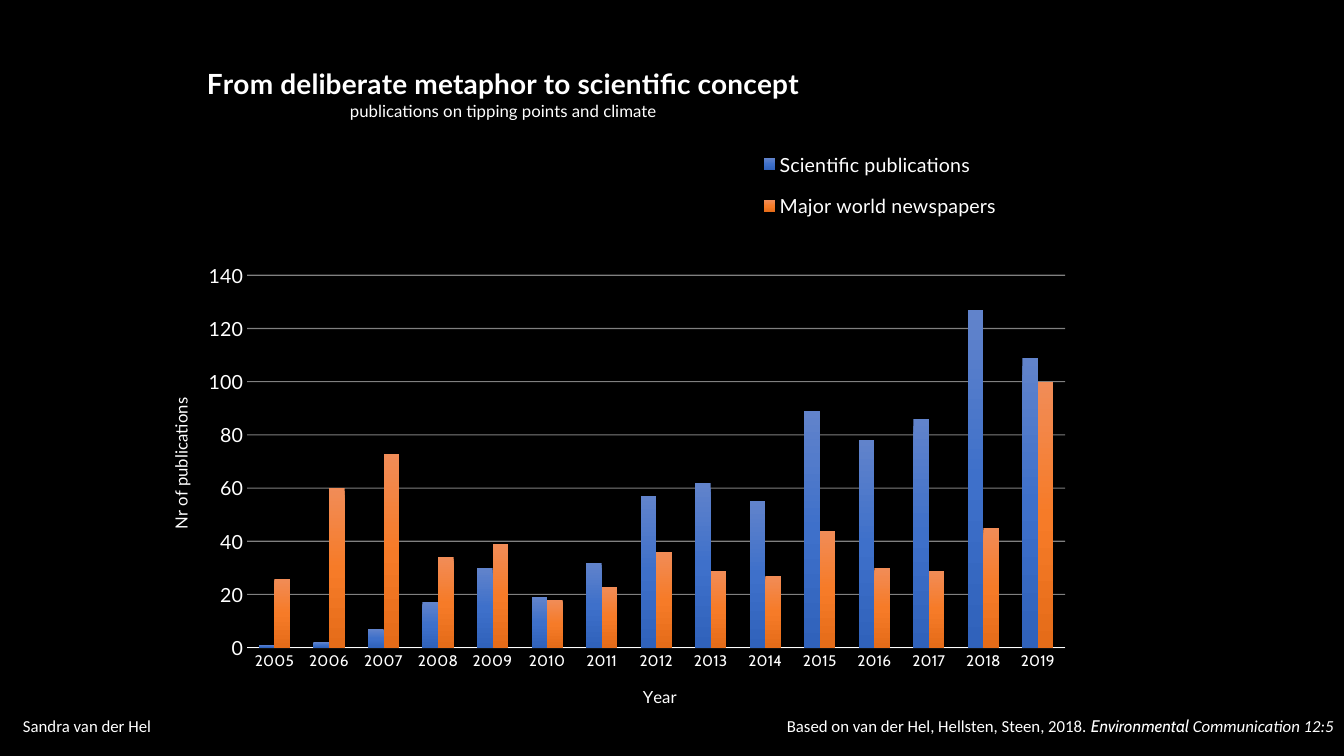
from copy import deepcopy

from lxml import etree
from pptx import Presentation
from pptx.chart.data import CategoryChartData
from pptx.dml.color import RGBColor
from pptx.enum.chart import XL_CHART_TYPE, XL_LEGEND_POSITION, XL_TICK_MARK
from pptx.enum.text import MSO_ANCHOR
from pptx.oxml.ns import qn
from pptx.util import Cm, Pt

COLUMNS = XL_CHART_TYPE.COLUMN_CLUSTERED
LEGEND_LEFT = XL_LEGEND_POSITION.LEFT
NO_TICK = XL_TICK_MARK.NONE
TOP, MIDDLE = MSO_ANCHOR.TOP, MSO_ANCHOR.MIDDLE

BLACK, WHITE = "000000", "FFFFFF"
YEARS = [str(year) for year in range(2005, 2020)]
SERIES = [
    ("Scientific publications",
     [1, 2, 7, 17, 30, 19, 32, 57, 62, 55, 89, 78, 86, 127, 109],
     ["6183CB", "3E70CA", "3062BB"]),
    ("Major world newspapers",
     [26, 60, 73, 34, 39, 18, 23, 36, 29, 27, 44, 30, 29, 45, 100],
     ["F18C57", "F67B28", "E56C19"]),
]


def color(value):
    """Return the colour for a hex string."""
    return RGBColor.from_string(value)


def set_layout(parent, target="", **values):
    """Place a chart part by fractions of the chart area."""
    for old in parent.findall(qn("c:layout")):
        parent.remove(old)
    layout = etree.Element(qn("c:layout"))
    manual = etree.SubElement(layout, qn("c:manualLayout"))
    settings = {"layoutTarget": target} if target else {}
    settings.update(xMode="edge", yMode="edge", **values)
    for name, value in settings.items():
        etree.SubElement(manual, qn("c:" + name)).set("val", str(value))
    overlay = parent.find(qn("c:overlay"))
    if overlay is None:
        parent.insert(0, layout)
    else:
        overlay.addprevious(layout)


class SlideBuilder:
    """Hold the style and the current slide."""

    def __init__(self, presentation):
        """Add a black blank slide."""
        self.chart_font = "Lato"
        self.text_font = "Calibri"
        self.accent_font = "Cabin"
        self.slide = presentation.slides.add_slide(presentation.slide_layouts[6])
        fill = self.slide.background.fill
        fill.solid()
        fill.fore_color.rgb = color(BLACK)

    def style(self, font, size, name, bold=False, italic=False):
        """Format a font in white."""
        font.size, font.name = Pt(size), name
        font.bold, font.italic = bold, italic
        font.color.rgb = color(WHITE)

    def text(self, left, top, width, height, runs, anchor=TOP):
        """Add a one-paragraph text box from (text, font, italic) runs."""
        shape = self.slide.shapes.add_textbox(Cm(left), Cm(top), Cm(width), Cm(height))
        frame = shape.text_frame
        frame.word_wrap = True
        frame.vertical_anchor = anchor
        for text, name, italic in runs:
            run = frame.paragraphs[0].add_run()
            run.text = text
            self.style(run.font, 12, name, italic=italic)

    def chart_title(self, title, lines):
        """Fill a chart or axis title from (text, size, bold) lines."""
        frame = title.text_frame
        for index, (text, size, bold) in enumerate(lines):
            paragraph = frame.add_paragraph() if index else frame.paragraphs[0]
            run = paragraph.add_run()
            run.text = text
            self.style(run.font, size, self.chart_font, bold)

    def column_chart(self, left, top, width, height):
        """Add the clustered column chart."""
        data = CategoryChartData()
        data.categories = YEARS
        for name, values, _ in SERIES:
            data.add_series(name, values)
        chart = self.slide.shapes.add_chart(
            COLUMNS, Cm(left), Cm(top), Cm(width), Cm(height), data).chart
        self.style(chart.font, 10, self.chart_font)
        plot = chart.plots[0]
        plot.gap_width, plot.overlap, plot.vary_by_categories = 150, 0, False
        for series, (_, _, shades) in zip(plot.series, SERIES):
            self.gradient(series, shades)
        self.axes(chart)
        self.titles_and_legend(chart)

    def gradient(self, series, shades):
        """Fill a series with a three-stop vertical gradient."""
        fill = series.format.fill
        fill.gradient()
        fill.gradient_angle = 270
        stop_list = series._element.xpath("./c:spPr//a:gsLst")[0]
        stop_list.append(deepcopy(stop_list[0]))
        for index, (stop, shade) in enumerate(zip(fill.gradient_stops, shades)):
            stop.position = index / 2
            stop.color.rgb = color(shade)
        series.format.line.fill.background()

    def axes(self, chart):
        """Format both axes and the gridlines."""
        years, counts = chart.category_axis, chart.value_axis
        for axis, size, name in ((years, 11, self.accent_font),
                                 (counts, 14, self.chart_font)):
            axis.major_tick_mark = axis.minor_tick_mark = NO_TICK
            self.style(axis.tick_labels.font, size, name)
        years.format.line.width = Pt(1)
        years.format.line.color.rgb = color(WHITE)
        counts.minimum_scale, counts.maximum_scale, counts.major_unit = 0, 140, 20
        counts.format.line.fill.background()
        grid = counts.major_gridlines.format.line
        grid.width = Pt(0.75)
        grid.color.rgb = color(WHITE)
        shade = chart.element.xpath("//c:majorGridlines//a:srgbClr")[0]
        etree.SubElement(shade, qn("a:alpha")).set("val", "50000")

    def titles_and_legend(self, chart):
        """Add the titles and the legend and place each part."""
        chart.has_title = True
        self.chart_title(chart.chart_title, [
            ("From deliberate metaphor to scientific concept", 20, True),
            ("publications on tipping points and climate", 12, False)])
        self.chart_title(chart.category_axis.axis_title, [("Year", 12, False)])
        self.chart_title(chart.value_axis.axis_title,
                         [("Nr of publications", 12, False)])
        chart.has_legend = True
        chart.legend.position = LEGEND_LEFT
        chart.legend.include_in_layout = True
        self.style(chart.legend.font, 14, self.chart_font)
        rotation = chart.element.xpath("//c:valAx/c:title//a:bodyPr")[0]
        rotation.set("rot", "-5400000")
        rotation.set("vert", "horz")
        places = {
            "//c:chart/c:title": dict(x=0.106, y=0.03),
            "//c:catAx/c:title": dict(x=0.518, y=0.963),
            "//c:valAx/c:title": dict(x=0.07, y=0.533),
            "//c:legend": dict(x=0.615, y=0.14, w=0.26, h=0.153),
            "//c:plotArea": dict(target="inner", x=0.147, y=0.352, w=0.773, h=0.56),
        }
        for part, place in places.items():
            set_layout(chart.element.xpath(part)[0], **place)


def main():
    """Build and save the slide."""
    presentation = Presentation()
    presentation.slide_width, presentation.slide_height = Cm(33.87), Cm(19.05)
    builder = SlideBuilder(presentation)
    builder.column_chart(2.31, 1.04, 26.67, 16.89)
    builder.text(19.58, 17.91, 15.39, 0.76, [
        ("Based on van der Hel, Hellsten, Steen, 2018. ", builder.text_font, False),
        ("Environmental", builder.accent_font, True),
        (" Communication 12:5", builder.text_font, True)])
    builder.text(0.33, 17.78, 11.43, 1.02,
                 [("Sandra van der Hel", builder.text_font, False)], MIDDLE)
    presentation.save("out.pptx")


if __name__ == "__main__":
    main()
